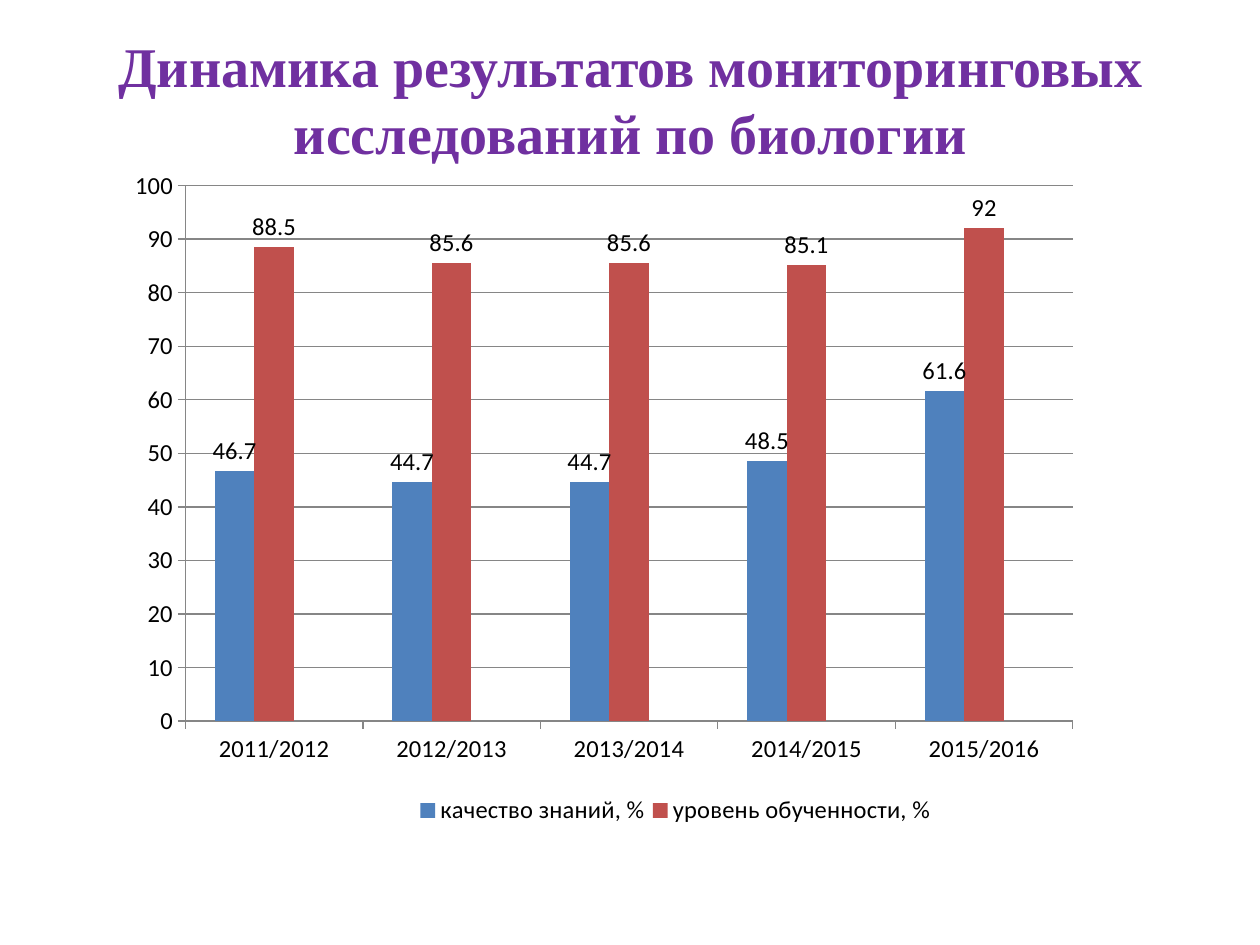
import pptx
import pptx.util
import pptx.oxml
import pptx.chart.data
import pptx.dml.color
import pptx.enum.chart
import pptx.enum.text
from pptx.util import Inches

# Content
TITLE = "Динамика результатов мониторинговых исследований по биологии"
YEARS = ["2011/2012", "2012/2013", "2013/2014", "2014/2015", "2015/2016"]
SERIES = [
    ("качество знаний, %", [46.7, 44.7, 44.7, 48.5, 61.6], "blue"),
    ("уровень обученности, %", [88.5, 85.6, 85.6, 85.1, 92], "red"),
    ("Series 3", [None] * len(YEARS), "green"),  # empty slot in each group
]
COLORS = {"title": "7030A0", "text": "000000", "grid": "868686",
          "blue": "4F81BD", "red": "C0504D", "green": "9BBB59"}
NS = 'xmlns:c="http://schemas.openxmlformats.org/drawingml/2006/chart"'


def color(name):
    return pptx.dml.color.RGBColor.from_string(COLORS[name])


def layout(box, inner=False):
    """Manual chart layout from x, y, w, h as shares of the chart."""
    target = '<c:layoutTarget val="inner"/>' if inner else ""
    modes = "".join(f'<c:{k}Mode val="edge"/>' for k in "xy")
    sizes = "".join(f'<c:{k} val="{v}"/>' for k, v in zip("xywh", box))
    return pptx.oxml.parse_xml(
        f"<c:layout {NS}><c:manualLayout>{target}{modes}{sizes}"
        "</c:manualLayout></c:layout>")


def clear(parent):
    for old in parent.xpath("./c:layout"):
        parent.remove(old)


prs = pptx.Presentation()
prs.slide_width, prs.slide_height = Inches(10), Inches(7.5)
slide = prs.slides.add_slide(prs.slide_layouts[6])

# Title
box = slide.shapes.add_textbox(Inches(0.2), Inches(0.21), Inches(9.61), Inches(1.15))
frame = box.text_frame
frame.word_wrap = True
frame.vertical_anchor = pptx.enum.text.MSO_ANCHOR.MIDDLE
para = frame.paragraphs[0]
para.text = TITLE
para.alignment = pptx.enum.text.PP_ALIGN.CENTER
para.font.name = "Times New Roman"
para.font.size = pptx.util.Pt(32)
para.font.bold = True
para.font.color.rgb = color("title")

# Chart
data = pptx.chart.data.CategoryChartData()
data.categories = YEARS
for name, vals, _ in SERIES:
    data.add_series(name, vals)
chart = slide.shapes.add_chart(
    pptx.enum.chart.XL_CHART_TYPE.COLUMN_CLUSTERED,
    Inches(0.98), Inches(1.31), Inches(8.19), Inches(5.45), data).chart
chart.has_title = False
chart.font.name = "Calibri"
chart.font.size = pptx.util.Pt(14)
chart.font.color.rgb = color("text")

# Bars and labels
plot = chart.plots[0]
plot.gap_width = 150
plot.overlap = 0
plot.vary_by_categories = False
for bars, (_, _, tint) in zip(plot.series, SERIES):
    bars.format.fill.solid()
    bars.format.fill.fore_color.rgb = color(tint)
    bars.data_labels.show_value = True
    bars.data_labels.position = pptx.enum.chart.XL_LABEL_POSITION.OUTSIDE_END

# Axes
for axis in (chart.category_axis, chart.value_axis):
    axis.major_tick_mark = pptx.enum.chart.XL_TICK_MARK.OUTSIDE
    axis.format.line.color.rgb = color("grid")
scale = chart.value_axis
scale.minimum_scale, scale.maximum_scale, scale.major_unit = 0, 100, 10
scale.has_major_gridlines = True
scale.major_gridlines.format.line.color.rgb = color("grid")

# Plot area
area = chart.element.xpath(".//c:plotArea")[0]
clear(area)
area.insert(0, layout((0.06, 0.03, 0.86, 0.78), inner=True))

# Legend without the empty series
chart.has_legend = True
chart.legend.position = pptx.enum.chart.XL_LEGEND_POSITION.RIGHT
chart.legend.include_in_layout = False
legend = chart.element.xpath(".//c:legend")[0]
clear(legend)
spot = legend.xpath("./c:legendPos")[0]
spot.addnext(layout((0.28, 0.91, 0.51, 0.06)))
spot.addnext(pptx.oxml.parse_xml(
    f'<c:legendEntry {NS}><c:idx val="2"/><c:delete val="1"/></c:legendEntry>'))

prs.save("out.pptx")
